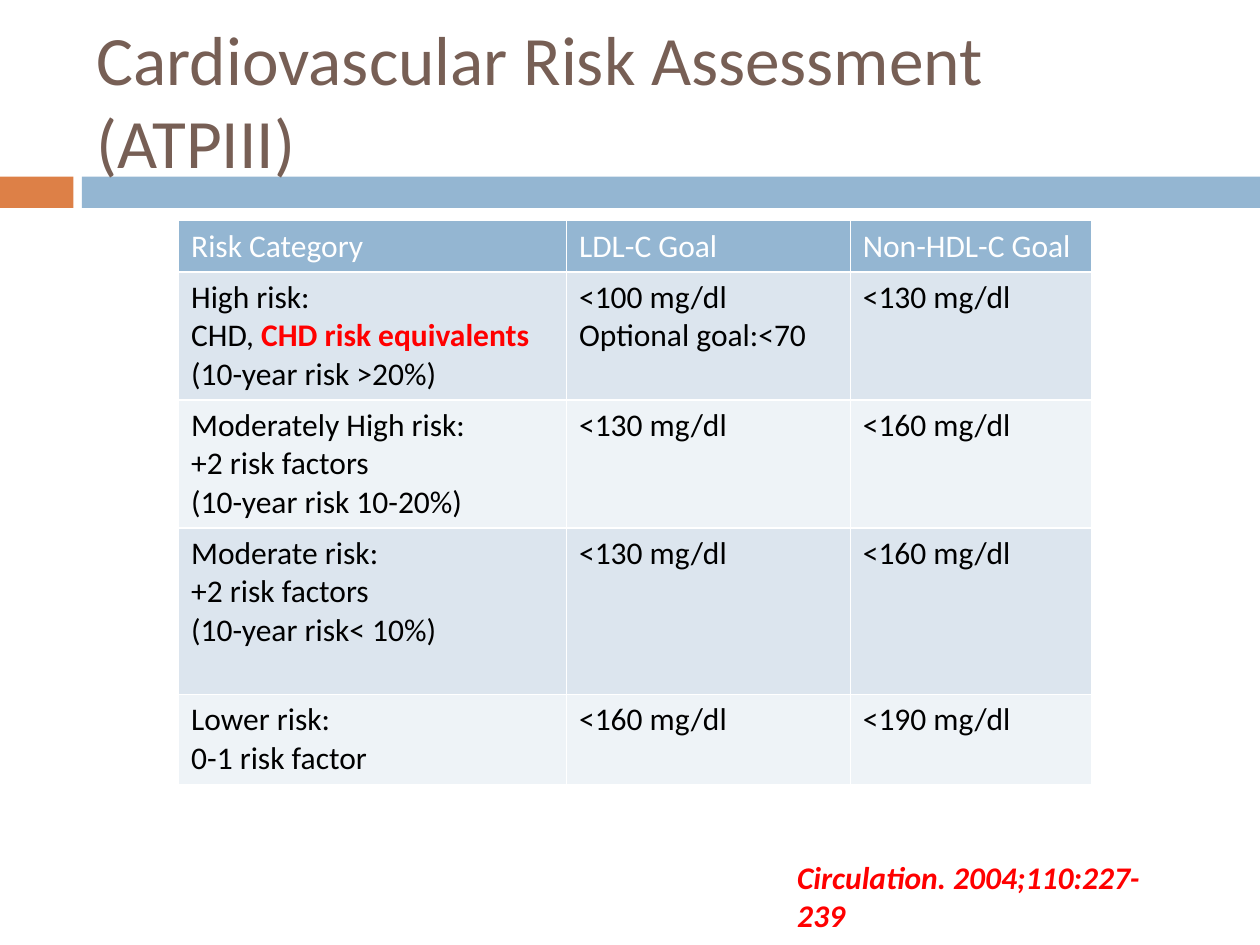
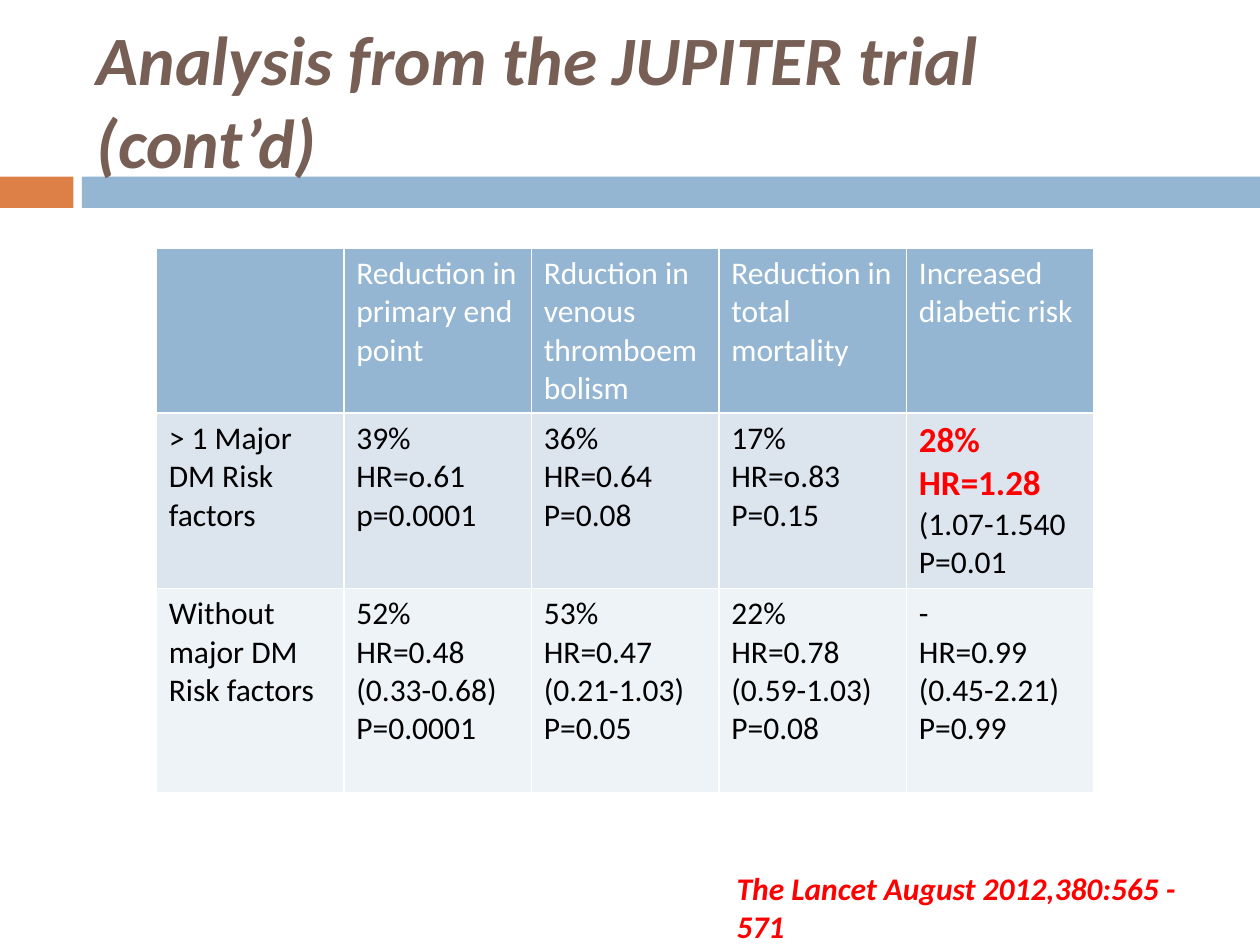
from pptx import Presentation
from pptx.dml.color import RGBColor
from pptx.enum.shapes import MSO_SHAPE
from pptx.enum.text import MSO_ANCHOR
from pptx.util import Cm, Pt

RECT = MSO_SHAPE.RECTANGLE
MIDDLE = MSO_ANCHOR.MIDDLE

BLUE = "94B6D2"
ORANGE = "DD8047"
BROWN = "775F55"
RED = "FF0000"
BLACK = "000000"
WHITE = "FFFFFF"
BANDS = ["DCE5EE", "EEF3F7"]

BASE = {"name": "Calibri", "size": Pt(18), "bold": False, "italic": False}
TITLE = {**BASE, "size": Pt(39.6)}
STRONG = {**BASE, "bold": True}
LARGE = {**STRONG, "size": Pt(20)}
SOURCE = {**STRONG, "italic": True}

RISKS = [
    ["Risk Category", "LDL-C Goal", "Non-HDL-C Goal"],
    ["High risk:\nCHD, *CHD risk equivalents*\n(10-year risk >20%)",
     "<100 mg/dl\nOptional goal:<70", "<130 mg/dl"],
    ["Moderately High risk:\n+2 risk factors\n(10-year risk 10-20%)",
     "<130 mg/dl", "<160 mg/dl"],
    ["Moderate risk:\n+2 risk factors\n(10-year risk< 10%)",
     "<130 mg/dl", "<160 mg/dl"],
    ["Lower risk:\n0-1 risk factor", "<160 mg/dl", "<190 mg/dl"],
]

TRIAL = [
    ["", "Reduction in primary end point",
     "Rduction in venous thromboembolism",
     "Reduction in total mortality", "Increased diabetic risk"],
    ["> 1 Major DM Risk factors", "39%\nHR=o.61\np=0.0001",
     "36%\nHR=0.64\nP=0.08", "17%\nHR=o.83\nP=0.15",
     "*28%*\n*HR=1.28 *(1.07-1.540\nP=0.01"],
    ["Without major DM Risk factors", "52%\nHR=0.48 (0.33-0.68)\nP=0.0001",
     "53%\nHR=0.47 (0.21-1.03)\nP=0.05",
     "22%\nHR=0.78\n(0.59-1.03)\nP=0.08",
     "-\nHR=0.99\n(0.45-2.21)\nP=0.99"],
]


def paint(target, color):
    target.rgb = RGBColor.from_string(color)


def fill(item, color):
    item.fill.solid()
    paint(item.fill.fore_color, color)


def add_run(para, text, style, color):
    run = para.add_run()
    run.text = text
    for key, value in style.items():
        setattr(run.font, key, value)
    paint(run.font.color, color)


def add_text(slide, box, text, style, color, anchor=None):
    frame = slide.shapes.add_textbox(*map(Cm, box)).text_frame
    frame.word_wrap = True
    frame.vertical_anchor = anchor
    add_run(frame.paragraphs[0], text, style, color)


def add_band(slide, left, width, color):
    band = slide.shapes.add_shape(RECT, Cm(left), Cm(3.56), Cm(width), Cm(0.63))
    band.shadow.inherit = False
    band.line.fill.background()
    fill(band, color)


def fill_cell(cell, text, color, hot):
    frame = cell.text_frame
    for num, line in enumerate(text.split("\n")):
        para = frame.add_paragraph() if num else frame.paragraphs[0]
        for part, words in enumerate(line.split("*")):
            if words:
                style, tone = (hot, RED) if part % 2 else (BASE, color)
                add_run(para, words, style, tone)


def add_grid(slide, left, top, widths, heights, data, hot):
    frame = slide.shapes.add_table(
        len(heights), len(widths), Cm(left), Cm(top),
        Cm(sum(widths)), Cm(sum(heights)))
    table = frame.table
    for col, width in zip(table.columns, widths):
        col.width = Cm(width)
    for row, (height, texts) in enumerate(zip(heights, data)):
        table.rows[row].height = Cm(height)
        for col, text in enumerate(texts):
            cell = table.cell(row, col)
            fill(cell, BANDS[(row - 1) % 2] if row else BLUE)
            fill_cell(cell, text, BLACK if row else WHITE, hot)


def add_page(deck, title, style):
    slide = deck.slides.add_slide(deck.slide_layouts[6])
    add_band(slide, 0, 1.48, ORANGE)
    add_band(slide, 1.65, 23.75, BLUE)
    add_text(slide, (1.7, 0.64, 22.66, 2.74), title, style, BROWN, MIDDLE)
    return slide


def main():
    deck = Presentation()
    deck.slide_width, deck.slide_height = Cm(25.4), Cm(19.05)

    risk = add_page(deck, "Cardiovascular Risk Assessment (ATPIII)", TITLE)
    add_grid(risk, 3.6, 4.45, [7.82, 5.72, 4.87],
             [1.03, 2.58, 2.58, 3.36, 1.81], RISKS, STRONG)
    add_text(risk, (15.82, 17.17, 8.25, 1.02),
             "Circulation. 2004;110:227-239", SOURCE, RED)

    trial = add_page(deck, "Analysis from the JUPITER trial (cont’d)",
                     {**TITLE, "bold": True, "italic": True})
    add_grid(trial, 3.15, 5, [3.78] * 5, [3.33, 3.53, 4.13], TRIAL, LARGE)
    add_text(trial, (14.6, 17.4, 10.3, 1.02),
             "The Lancet August 2012,380:565 - 571", SOURCE, RED)

    deck.save("out.pptx")


if __name__ == "__main__":
    main()
